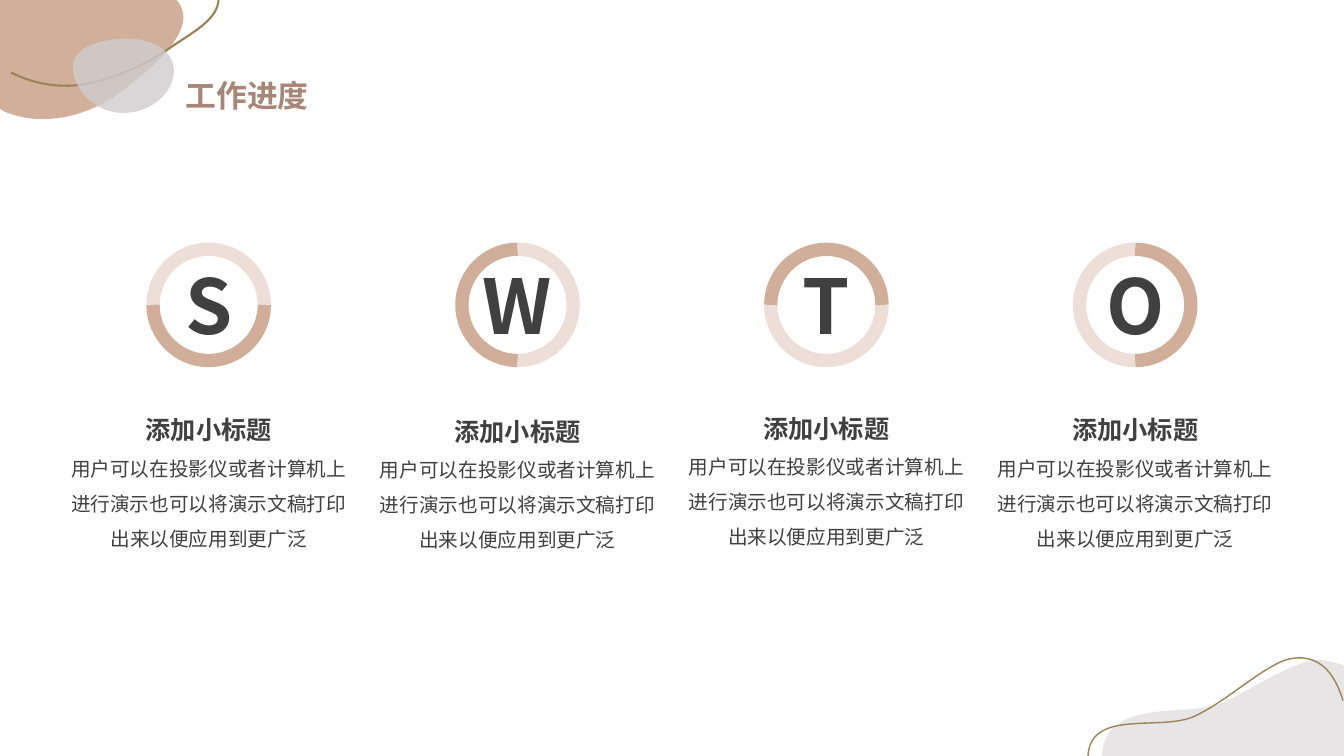
"""Builds the work progress slide: four lettered rings with captions."""
import math
from collections import namedtuple

from lxml import etree
from pptx import Presentation
from pptx import util as u
from pptx.dml.color import RGBColor
from pptx.enum import text
from pptx.oxml.ns import qn

TITLE = "工作进度"
SUBTITLE = "添加小标题"
BODY = "用户可以在投影仪或者计算机上进行演示也可以将演示文稿打印出来以便应用到更广泛"
COLUMNS = [
    {"letter": "S", "turn": 0, "caption_top": 3.96},
    {"letter": "W", "turn": 90, "caption_top": 3.97},
    {"letter": "T", "turn": 180, "caption_top": 3.94},
    {"letter": "O", "turn": 270, "caption_top": 3.96},
]

Theme = namedtuple("Theme", "font tan pale grey gold title ink title_pt letter_pt sub_pt body_pt ring_pt")
THEME = Theme("Noto Sans CJK SC", "D1AE9A", "EDDFD7", "D0CCCD", "9B8357", "A78677", "404040",
              22, 54, 18, 14, 9.5)

SLIDE_W, SLIDE_H = 13.33, 7.5
FIRST_CENTER, COLUMN_STEP = 2.07, 3.063
RING_Y, RING_R = 3.025, 0.552
ARC_HANDLE = RING_R * 0.55
LETTER_W, LETTER_H = 0.98, 1.01
CAPTION_W, CAPTION_H = 2.79, 1.51
CURVE_STEPS = 40

BLOBS = [
    {"fill": THEME.tan, "alpha": 98, "start": (0.47, 1.18), "segments": [
        (0.73, 1.17, 1, 1.07, 1.24, 0.88), (1.62, 0.58, 1.96, 0.26, 1.76, 0.01),
        (1.74, -0.01), (0, -0.01), (0, 1.08), (0.05, 1.11),
        (0.18, 1.16, 0.32, 1.19, 0.47, 1.18)]},
    {"line": THEME.gold, "width": 1.5, "start": (0.11, 0.72), "segments": [
        (0.27, 0.8, 0.45, 0.85, 0.63, 0.85), (0.96, 0.87, 1.44, 0.65, 1.68, 0.48),
        (1.93, 0.3, 2.33, 0.13, 2.1, -0.2)]},
    {"fill": THEME.grey, "alpha": 80, "start": (0.74, 0.58), "segments": [
        (0.66, 0.77, 0.87, 1.13, 1.24, 1.12), (1.6, 1.11, 1.86, 0.75, 1.65, 0.52),
        (1.43, 0.28, 0.81, 0.39, 0.74, 0.58)]},
    {"fill": THEME.grey, "alpha": 50, "start": (13.06, 6.55), "segments": [
        (13.08, 6.55, 13.09, 6.55, 13.11, 6.55), (13.18, 6.56, 13.25, 6.57, 13.33, 6.6),
        (13.33, 6.6), (13.33, 7.5), (10.93, 7.5), (10.93, 7.5),
        (10.96, 6.9, 11.78, 7.13, 12.13, 6.97), (12.47, 6.81, 12.8, 6.57, 13.06, 6.55)]},
    {"line": THEME.gold, "width": 1, "start": (10.79, 7.53), "segments": [
        (10.79, 7.01, 11.52, 7.27, 11.86, 7.1), (12.2, 6.94, 12.59, 6.55, 12.83, 6.53),
        (13.07, 6.5, 13.23, 6.65, 13.32, 6.95)]},
]


def pairs(segment):
    return list(zip(segment[::2], segment[1::2]))


def bounds(start, segments):
    points = [start]
    for segment in segments:
        anchors = [points[-1], *pairs(segment)]
        n = len(anchors) - 1
        for i in range(1, CURVE_STEPS + 1):
            t = i / CURVE_STEPS
            weights = [math.comb(n, k) * t ** k * (1 - t) ** (n - k) for k in range(n + 1)]
            points.append(tuple(sum(w * a[axis] for w, a in zip(weights, anchors))
                                for axis in (0, 1)))
    xs, ys = zip(*points)
    return min(xs), min(ys), max(xs), max(ys)


def add_outline(s, start, segments, fill=None, alpha=100, line=None, width=1):
    left, top, right, bottom = map(u.Inches, bounds(start, segments))
    builder = s.shapes.build_freeform(left, top, scale=1.0)
    builder.add_line_segments([(right, bottom)], close=False)
    sp = builder.convert_to_shape()
    path = sp._element.spPr.find(".//" + qn("a:path"))
    for step in list(path):
        path.remove(step)
    for i, segment in enumerate([start, *segments]):
        tag = "a:moveTo" if i == 0 else "a:lnTo" if len(segment) == 2 else "a:cubicBezTo"
        step = etree.SubElement(path, qn(tag))
        for x, y in pairs(segment):
            etree.SubElement(step, qn("a:pt"), x=str(u.Inches(x) - left), y=str(u.Inches(y) - top))
    sp.shadow.inherit = False
    if fill:
        etree.SubElement(path, qn("a:close"))
        sp.fill.solid()
        sp.fill.fore_color.rgb = RGBColor.from_string(fill)
        color = sp._element.spPr.find(qn("a:solidFill"))[0]
        etree.SubElement(color, qn("a:alpha"), val=str(alpha * 1000))
        sp.line.fill.background()
    else:
        sp.fill.background()
        sp.line.color.rgb = RGBColor.from_string(line)
        sp.line.width = u.Pt(width)
    return sp


def add_half_ring(s, cx, side, turn, color):
    shift = side * RING_R / 2
    angle = math.radians(turn)
    x, y = cx - shift * math.sin(angle), RING_Y + shift * (math.cos(angle) - 1)
    reach, handle = side * RING_R, side * ARC_HANDLE
    sp = add_outline(s, (x - RING_R, y), [
        (x - RING_R, y + handle, x - ARC_HANDLE, y + reach, x, y + reach),
        (x + ARC_HANDLE, y + reach, x + RING_R, y + handle, x + RING_R, y),
    ], line=color, width=THEME.ring_pt)
    sp.rotation = turn


def add_text(s, box, lines, align=None, spacing=None, inset=True, anchor=text.MSO_ANCHOR.TOP):
    tf = s.shapes.add_textbox(*map(u.Inches, box)).text_frame
    tf.word_wrap = True
    tf.auto_size = text.MSO_AUTO_SIZE.SHAPE_TO_FIT_TEXT
    tf.vertical_anchor = anchor
    if not inset:
        tf.margin_left = tf.margin_right = tf.margin_top = tf.margin_bottom = 0
    for i, (words, size, color, bold) in enumerate(lines):
        p = tf.add_paragraph() if i else tf.paragraphs[0]
        p.text = words
        p.alignment = align
        p.line_spacing = spacing
        p.font.name, p.font.size, p.font.bold = THEME.font, u.Pt(size), bold
        p.font.color.rgb = RGBColor.from_string(color)
        latin = p._p.pPr.find(qn("a:defRPr")).find(qn("a:latin"))
        latin.addnext(etree.Element(qn("a:ea"), typeface=THEME.font))


def add_column(s, index, letter, turn, caption_top):
    cx = FIRST_CENTER + index * COLUMN_STEP
    for side, color in ((-1, THEME.pale), (1, THEME.tan)):
        add_half_ring(s, cx, side, turn, color)
    add_text(s, (cx - LETTER_W / 2, RING_Y - LETTER_H / 2, LETTER_W, LETTER_H),
             [(letter, THEME.letter_pt, THEME.ink, True)], text.PP_ALIGN.CENTER)
    add_text(s, (cx - CAPTION_W / 2, caption_top, CAPTION_W, CAPTION_H),
             [(SUBTITLE, THEME.sub_pt, THEME.ink, True), (BODY, THEME.body_pt, THEME.ink, False)],
             text.PP_ALIGN.CENTER, 1.5, False, text.MSO_ANCHOR.MIDDLE)


def main():
    prs = Presentation()
    prs.slide_width, prs.slide_height = u.Inches(SLIDE_W), u.Inches(SLIDE_H)
    s = prs.slides.add_slide(prs.slide_layouts[6])
    for blob in BLOBS:
        add_outline(s, **blob)
    add_text(s, (1.84, 0.69, 2.25, 0.44), [(TITLE, THEME.title_pt, THEME.title, True)],
             spacing=1.2, inset=False)
    for index, column in enumerate(COLUMNS):
        add_column(s, index, **column)
    prs.save("out.pptx")


if __name__ == "__main__":
    main()
